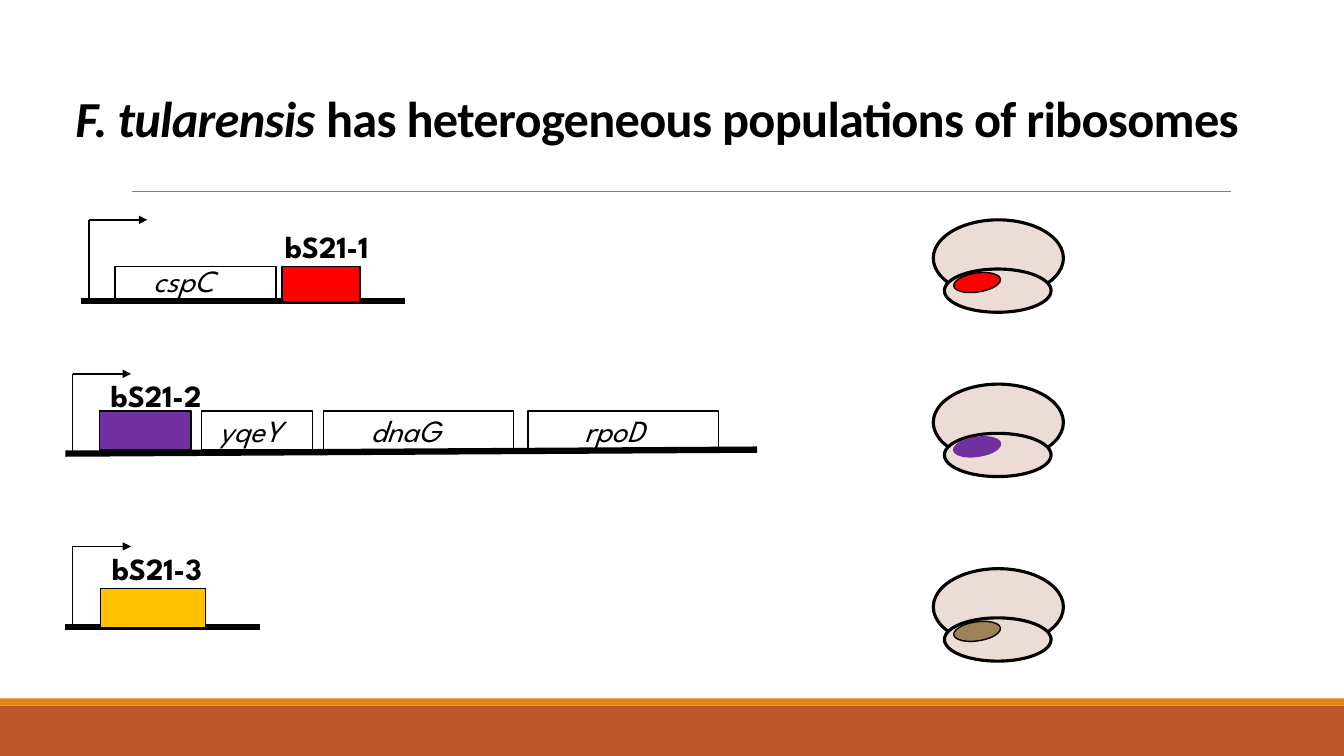
"""Build a slide on the three bS21 operons and the ribosomes they give rise to."""
from dataclasses import dataclass
from typing import Optional

from lxml.etree import SubElement
from pptx import Presentation
from pptx.dml.color import RGBColor
from pptx.enum.shapes import MSO_CONNECTOR, MSO_SHAPE
from pptx.enum.text import MSO_ANCHOR
from pptx.oxml.ns import qn
from pptx.shapes.autoshape import Shape
from pptx.shapes.connector import Connector
from pptx.util import Cm, Pt

COLORS = {
    "black": "000000",
    "rule": "808080",
    "footer": "BD582C",
    "stripe": "E48312",
    "subunit": "EBDCD5",
    "red": "FF0000",
    "purple": "7030A0",
    "gold": "FFC000",
    "tan": "9B8357",
}


@dataclass
class Gene:
    name: str
    left: float
    width: float
    label_left: float
    label_top: float
    color: Optional[str] = None


@dataclass
class Operon:
    left: float
    right: float
    left_y: float
    right_y: float
    promoter_left: float
    promoter_top: float
    gene_top: float
    gene_height: float
    genes: list[Gene]


@dataclass
class Ribosome:
    top: float
    protein: str
    outline: str = "black"


OPERONS = [
    Operon(2.03, 10.21, 7.59, 7.59, 2.24, 5.54, 6.71, 0.89, [
        Gene("cspC", 2.9, 4.06, 3.61, 6.48),
        Gene("bS21-1", 7.11, 1.96, 6.93, 5.61, "red"),
    ]),
    Operon(1.65, 19.08, 11.43, 11.33, 1.83, 9.42, 10.36, 0.97, [
        Gene("bS21-2", 2.51, 2.31, 2.54, 9.37, "purple"),
        Gene("yqeY", 5.08, 2.79, 5.28, 10.26),
        Gene("dnaG", 8.15, 4.8, 9.09, 10.24),
        Gene("rpoD", 13.31, 4.8, 14.48, 10.26),
    ]),
    Operon(1.65, 6.55, 15.8, 15.8, 1.83, 13.77, 14.83, 0.99, [
        Gene("bS21-3", 2.54, 2.64, 2.57, 13.72, "gold"),
    ]),
]
RIBOSOMES = [
    Ribosome(5.54, "red"),
    Ribosome(9.68, "purple", "purple"),
    Ribosome(14.33, "tan"),
]
RIBOSOME_LEFT = 23.52
PROMOTER_HEIGHT, PROMOTER_WIDTH = 2.08, 1.47

deck = Presentation()
deck.slide_width, deck.slide_height = Cm(33.87), Cm(19.05)
slide = deck.slides.add_slide(deck.slide_layouts[6])


def rgb(color: str) -> RGBColor:
    """Return the named colour."""
    return RGBColor.from_string(COLORS[color])


def add_figure(kind: MSO_SHAPE, left: float, top: float, width: float, height: float,
               fill: Optional[str], outline: Optional[str] = "black", weight: float = 1) -> Shape:
    """Draw a preset shape, with no fill or no outline where the colour is None."""
    figure = slide.shapes.add_shape(kind, Cm(left), Cm(top), Cm(width), Cm(height))
    figure.shadow.inherit = False
    if fill:
        figure.fill.solid()
        figure.fill.fore_color.rgb = rgb(fill)
    else:
        figure.fill.background()
    if outline:
        figure.line.color.rgb = rgb(outline)
        figure.line.width = Pt(weight)
    else:
        figure.line.fill.background()
    return figure


def add_line(x1: float, y1: float, x2: float, y2: float,
             weight: float = 1, color: str = "black") -> Connector:
    """Draw a straight line without a shadow."""
    line = slide.shapes.add_connector(MSO_CONNECTOR.STRAIGHT, Cm(x1), Cm(y1), Cm(x2), Cm(y2))
    line.line.color.rgb = rgb(color)
    line.line.width = Pt(weight)
    SubElement(line._element.spPr, qn("a:effectLst"))
    return line


def add_title() -> None:
    """Write the title, with the species in italics."""
    title = slide.shapes.add_textbox(Cm(1.65), Cm(-0.2), Cm(32.16), Cm(4.04)).text_frame
    title.word_wrap = True
    title.vertical_anchor = MSO_ANCHOR.BOTTOM
    paragraph = title.paragraphs[0]
    paragraph.line_spacing = 0.85
    paragraph.font.name, paragraph.font.size = "Calibri", Pt(36)
    paragraph.font.bold = True
    paragraph.font.color.rgb = rgb("black")
    for text, italic in (("F. tularensis ", True),
                         ("has heterogeneous populations of ribosomes", False)):
        run = paragraph.add_run()
        run.text = text
        run.font.italic = italic
        run.font._element.set("spc", "-50")


def add_gene(gene: Gene, top: float, height: float) -> None:
    """Draw a gene box and its name, bold when the gene is coloured."""
    add_figure(MSO_SHAPE.RECTANGLE, gene.left, top, gene.width, height, gene.color)
    label = slide.shapes.add_textbox(Cm(gene.label_left), Cm(gene.label_top),
                                     Cm(3.1 if gene.color else 2.4), Cm(1.15)).text_frame
    label.word_wrap = True
    paragraph = label.paragraphs[0]
    paragraph.text = gene.name
    paragraph.font.name, paragraph.font.size = "League Spartan", Pt(22)
    paragraph.font.bold = gene.color is not None
    paragraph.font.italic = gene.color is None
    paragraph.font.color.rgb = rgb("black")


def add_operon(operon: Operon) -> None:
    """Draw the DNA strand, its genes and the promoter arrow."""
    add_line(operon.left, operon.left_y, operon.right, operon.right_y, 4.5)
    for gene in operon.genes:
        add_gene(gene, operon.gene_top, operon.gene_height)
    left, top = operon.promoter_left, operon.promoter_top
    add_line(left, top, left, top + PROMOTER_HEIGHT)
    arrow = add_line(left, top, left + PROMOTER_WIDTH, top)
    SubElement(arrow.line._get_or_add_ln(), qn("a:tailEnd"), type="triangle")


def add_ribosome(ribosome: Ribosome) -> None:
    """Draw the two subunits and the tilted bS21 protein."""
    left, top = RIBOSOME_LEFT, ribosome.top
    add_figure(MSO_SHAPE.OVAL, left, top, 3.28, 1.93, "subunit", weight=2.25)
    add_figure(MSO_SHAPE.OVAL, left + 0.28, top + 1.24, 2.69, 1.09, "subunit", weight=2.25)
    protein = add_figure(MSO_SHAPE.OVAL, left + 0.51, top + 1.34, 1.19, 0.48,
                         ribosome.protein, ribosome.outline)
    protein.rotation = -8.4


def main() -> None:
    """Draw the slide and save it."""
    add_figure(MSO_SHAPE.RECTANGLE, 0, 17.78, 33.87, 1.27, "footer", None)
    add_figure(MSO_SHAPE.RECTANGLE, 0, 17.6, 33.87, 0.18, "stripe", None)
    add_line(3.33, 4.83, 31.01, 4.83, 0.5, "rule")
    add_title()
    for operon in OPERONS:
        add_operon(operon)
    for ribosome in RIBOSOMES:
        add_ribosome(ribosome)
    deck.save("out.pptx")


if __name__ == "__main__":
    main()
